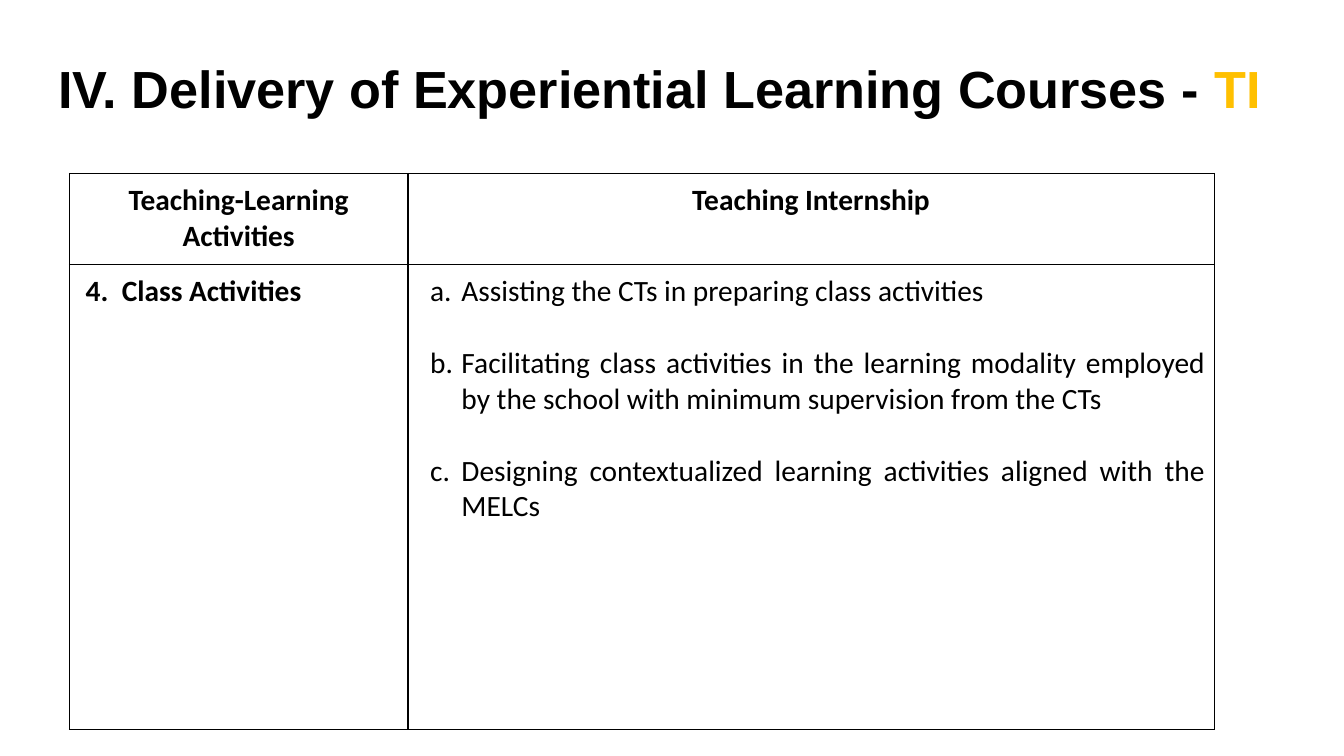
from lxml import etree
from pptx import Presentation
from pptx.dml.color import RGBColor
from pptx.enum import text
from pptx.oxml import ns
from pptx.util import Cm, Pt

COLORS = {"ink": "000000", "accent": "FFC000"}
INSET = Cm(0.23)


def add_text(p, words, size=21, font="Calibri", color="ink", bold=True,
             align=text.PP_ALIGN.LEFT):
    p.alignment = align
    r = p.add_run()
    r.text = words
    r.font.size = Pt(size)
    r.font.name = font
    r.font.bold = bold
    r.font.color.rgb = RGBColor.from_string(COLORS[color])


def number(p, scheme, start, left, hanging):
    """Give a paragraph automatic numbering and a hanging indent."""
    pPr = p._p.get_or_add_pPr()
    pPr.set("marL", str(left))
    pPr.set("indent", str(-hanging))
    clr = etree.SubElement(pPr, ns.qn("a:buClr"))
    etree.SubElement(clr, ns.qn("a:srgbClr"), val=COLORS["ink"])
    etree.SubElement(pPr, ns.qn("a:buFont"), typeface="+mj-lt")
    etree.SubElement(pPr, ns.qn("a:buAutoNum"), type=scheme, startAt=str(start))


prs = Presentation()
prs.slide_width, prs.slide_height = Cm(33.87), Cm(19.05)
s = prs.slides.add_slide(prs.slide_layouts[5])

# Title
title = s.shapes.title
title.left, title.top, title.width, title.height = Cm(1.14), Cm(0.97), Cm(31.55), Cm(2.26)
tf = title.text_frame
tf.auto_size = text.MSO_AUTO_SIZE.NONE
tf.vertical_anchor = text.MSO_ANCHOR.TOP
tf.margin_left = tf.margin_right = tf.margin_bottom = Cm(0.33)
tf.margin_top = Cm(0.46)
for words, color in (("IV. Delivery of Experiential Learning Courses - ", "ink"),
                     ("TI", "accent")):
    add_text(tf.paragraphs[0], words, size=37.3, font="Arial", color=color)

# Table
table = s.shapes.add_table(2, 2, Cm(1.75), Cm(4.37), Cm(28.85), Cm(14.02)).table
for column, width in zip(table.columns, (8.53, 20.32)):
    column.width = Cm(width)
for row, height in zip(table.rows, (2.29, 11.73)):
    row.height = Cm(height)

for i, row in enumerate(table.rows):
    for cell in row.cells:
        cell.margin_left = cell.margin_right = INSET
        cell.margin_top = cell.margin_bottom = INSET
        cell.fill.background()
        tcPr = cell._tc.get_or_add_tcPr()
        inner = "lnT" if i else "lnB"
        for k, side in enumerate(("lnL", "lnR", "lnT", "lnB")):
            width = Pt(0.75) if side == inner else Pt(1)
            ln = etree.Element(ns.qn(f"a:{side}"), w=str(width))
            fill = etree.SubElement(ln, ns.qn("a:solidFill"))
            etree.SubElement(fill, ns.qn("a:srgbClr"), val=COLORS["ink"])
            tcPr.insert(k, ln)

for j, heading in enumerate(("Teaching-Learning Activities", "Teaching Internship")):
    add_text(table.cell(0, j).text_frame.paragraphs[0], heading,
             align=text.PP_ALIGN.CENTER)

p = table.cell(1, 0).text_frame.paragraphs[0]
add_text(p, "Class Activities", align=text.PP_ALIGN.JUSTIFY)
number(p, "arabicPeriod", 4, Cm(1.09), Cm(0.91))

activities = (
    "Assisting the CTs in preparing class activities",
    "Facilitating class activities in the learning modality employed by the school "
    "with minimum supervision from the CTs",
    "Designing contextualized learning activities aligned with the MELCs",
)
tf = table.cell(1, 1).text_frame
for i, activity in enumerate(activities):
    p = tf.add_paragraph() if i else tf.paragraphs[0]
    add_text(p, activity, bold=False, align=text.PP_ALIGN.JUSTIFY)
    if i:
        p.space_before = Pt(25.6)
    number(p, "alphaLcPeriod", 1, Cm(1.12), Cm(0.79))

prs.save("out.pptx")
